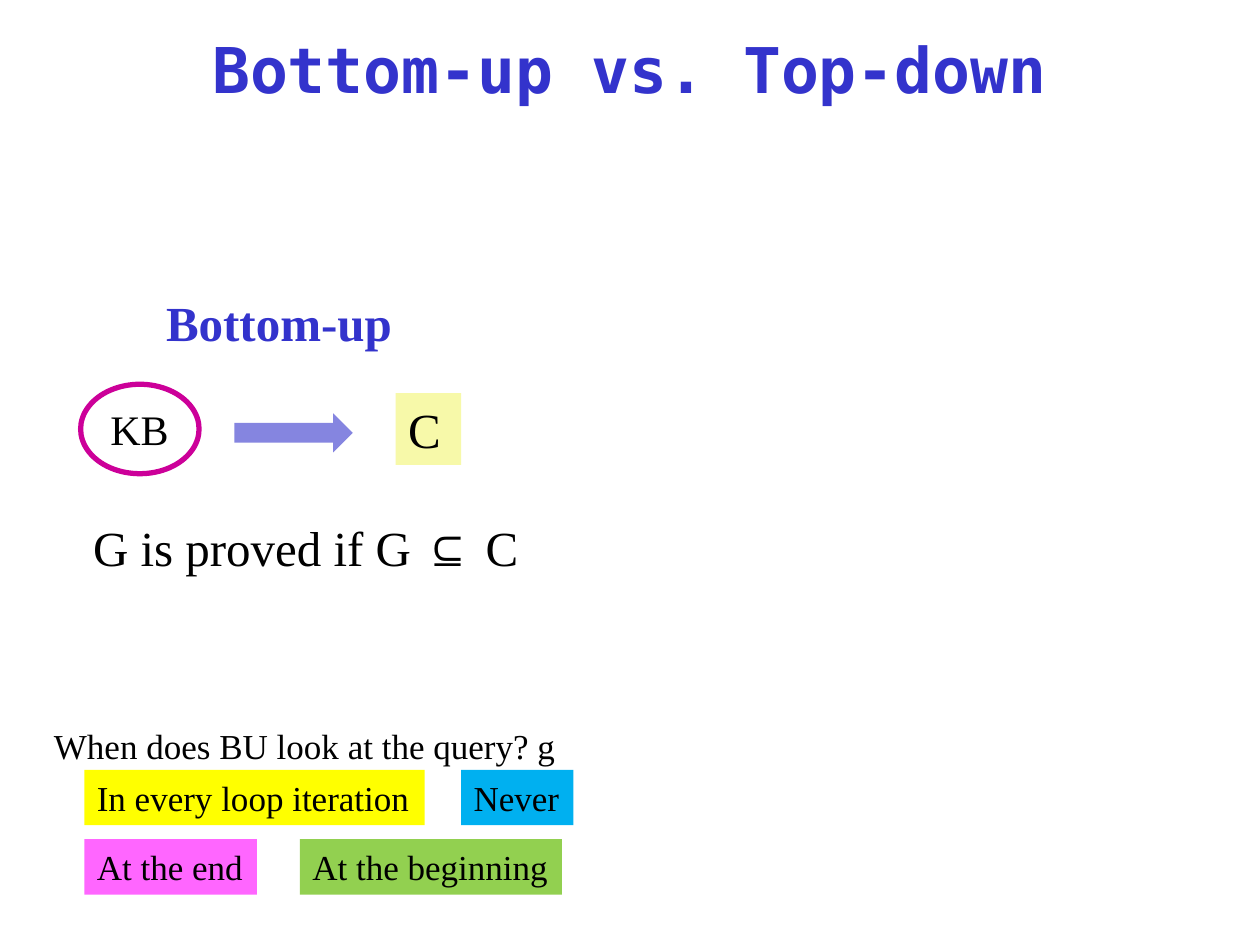
from pptx import Presentation, util as u
from pptx.dml.color import RGBColor
from pptx.enum import shapes, text

COLORS = {
    "blue": "3333CC", "black": "000000", "magenta": "CC0099", "arrow": "8585E0",
    "cream": "F7F9A9", "yellow": "FFFF00", "cyan": "00B0F0", "pink": "FF66FF",
    "green": "92D050",
}
SERIF, SANS, MONO = "Times New Roman", "Arial", "DejaVu Sans Mono"
KINDS = shapes.MSO_SHAPE

TITLE = "Bottom-up vs. Top-down"
HEADING = "Bottom-up"
PROOF = [("G is proved if G ", SERIF), ("⊆ ", SANS), ("C", SERIF)]
QUESTION = "When does BU look at the query? g"
ANSWER_ROWS = [
    [("In every loop iteration", 0.67, 2.7, "yellow"), ("Never", 3.66, 0.89, "cyan")],
    [("At the end", 0.67, 1.37, "pink"), ("At the beginning", 2.38, 2.08, "green")],
]
ANSWER_TOP, ANSWER_HEIGHT, ANSWER_PITCH = 6.11, 0.44, 0.55

presentation = Presentation()
presentation.slide_width, presentation.slide_height = u.Inches(10), u.Inches(7.5)
slide = presentation.slides.add_slide(presentation.slide_layouts[6])


def rgb(name):
    return RGBColor.from_string(COLORS[name])


def write(shape, content, size=20, font=SERIF, color="black", bold=False,
          align=text.PP_ALIGN.LEFT, anchor=text.MSO_ANCHOR.TOP, wrap=False):
    frame = shape.text_frame
    frame.word_wrap = wrap
    frame.vertical_anchor = anchor
    paragraph = frame.paragraphs[0]
    paragraph.alignment = align
    runs = [(content, font)] if isinstance(content, str) else content
    for words, face in runs:
        run = paragraph.add_run()
        run.text = words
        run.font.name = face
        run.font.size = u.Pt(size)
        run.font.bold = bold
        run.font.color.rgb = rgb(color)


def add_text(box, content, **style):
    write(slide.shapes.add_textbox(*map(u.Inches, box)), content, **style)


def add_shape(kind, box, fill=None, line=None):
    shape = slide.shapes.add_shape(kind, *map(u.Inches, box))
    shape.shadow.inherit = False
    if fill:
        shape.fill.solid()
        shape.fill.fore_color.rgb = rgb(fill)
    else:
        shape.fill.background()
    if line:
        shape.line.color.rgb = rgb(line)
        shape.line.width = u.Pt(3)
    else:
        shape.line.fill.background()
    return shape


add_text((0.33, 0.17, 9.33, 0.75), TITLE, size=36, font=MONO, color="blue", bold=True,
         align=text.PP_ALIGN.CENTER, anchor=text.MSO_ANCHOR.MIDDLE, wrap=True)
add_text((1.22, 2.27, 2.02, 0.57), HEADING, size=28, color="blue", bold=True)

knowledge_base = add_shape(KINDS.OVAL, (0.64, 3.05, 0.94, 0.71), line="magenta")
write(knowledge_base, "KB", size=24)
add_shape(KINDS.RIGHT_ARROW, (1.86, 3.28, 0.94, 0.31), fill="arrow")
consequences = add_shape(KINDS.RECTANGLE, (3.14, 3.12, 0.52, 0.57), fill="cream")
write(consequences, "C", size=28, wrap=True)

add_text((0.64, 4.06, 4.77, 0.57), PROOF, size=28, wrap=True)
add_text((0.33, 5.7, 4.6, 0.44), QUESTION, wrap=True)

for row, answers in enumerate(ANSWER_ROWS):
    top = ANSWER_TOP + row * ANSWER_PITCH
    for label, left, width, fill in answers:
        answer = add_shape(KINDS.RECTANGLE, (left, top, width, ANSWER_HEIGHT), fill=fill)
        write(answer, label)

presentation.save("out.pptx")
